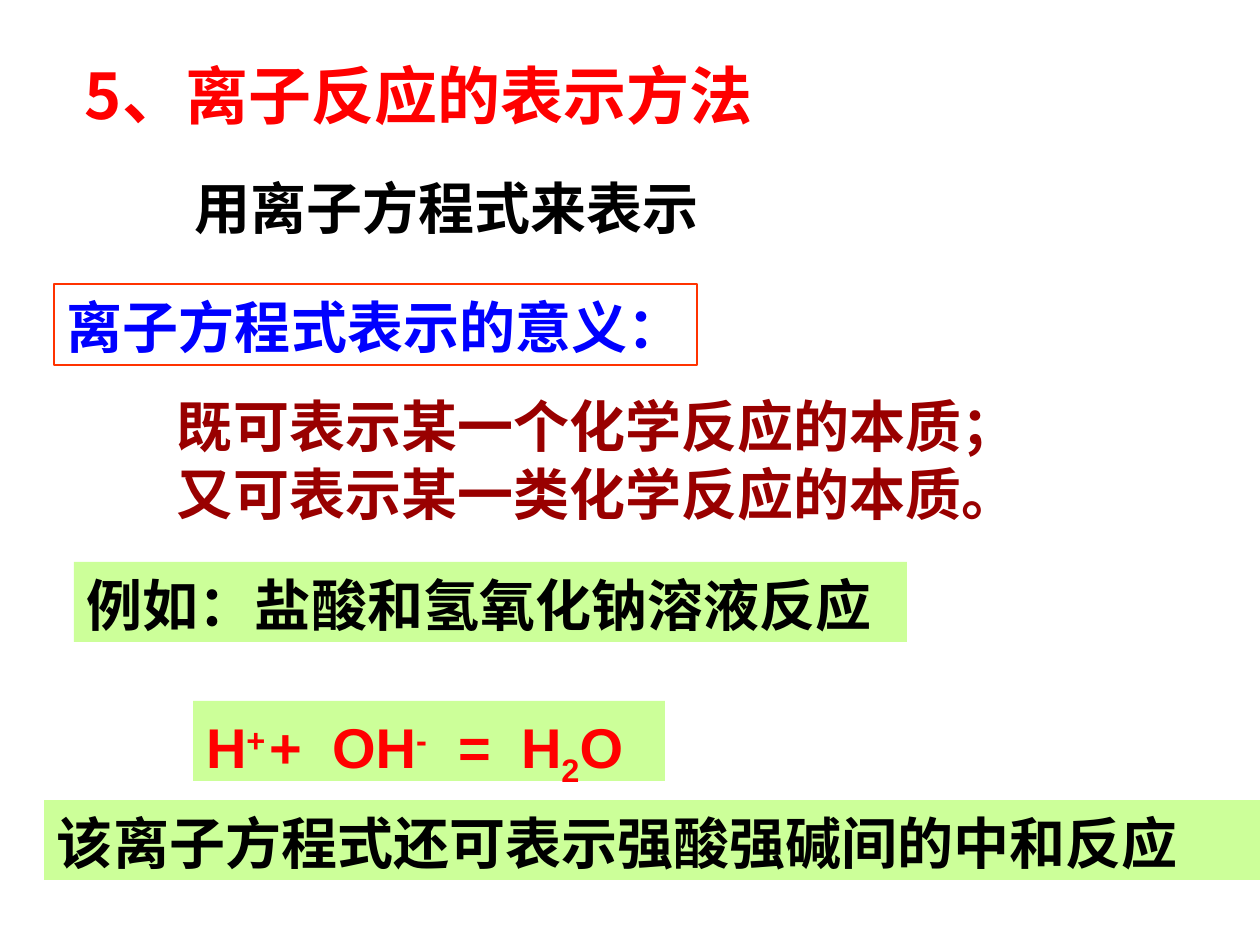
from dataclasses import dataclass

import pptx
import pptx.dml.color
import pptx.enum.shapes
import pptx.enum.text
import pptx.oxml
import pptx.oxml.ns
import pptx.util
from pptx.shapes.autoshape import Shape
from pptx.text.text import _Paragraph as Paragraph

PIXELS_PER_INCH = 126


@dataclass(frozen=True)
class Theme:
    title_color: str = "FF0000"
    text_color: str = "000000"
    heading_color: str = "0000FF"
    meaning_color: str = "990000"
    border_color: str = "FF3300"
    highlight: str = "CCFF99"
    title_font: str = "Noto Sans CJK SC"
    font: str = "Arial"
    title_size: int = 36
    size: int = 32
    line_ratio: float = 1.2


THEME = Theme()


@dataclass(frozen=True)
class Box:
    left: int
    top: int
    width: int
    height: int


@dataclass(frozen=True)
class Run:
    text: str
    baseline: int = 0


@dataclass(frozen=True)
class Style:
    color: str
    font: str = THEME.font
    size: int = THEME.size
    top_inset: int = 9
    fixed_lines: bool = True


@dataclass(frozen=True)
class Label:
    box: Box
    lines: list[list[Run]]
    style: Style
    fill: str | None = None
    border: str | None = None
    tab_stops: tuple[int, ...] = ()


def px(length: int) -> pptx.util.Emu:
    return pptx.util.Emu(round(length * 914400 / PIXELS_PER_INCH))


def rgb(color: str) -> pptx.dml.color.RGBColor:
    return pptx.dml.color.RGBColor.from_string(color)


def place(shape: Shape, box: Box) -> None:
    shape.left, shape.top = px(box.left), px(box.top)
    shape.width, shape.height = px(box.width), px(box.height)


def add_run(paragraph: Paragraph, part: Run, style: Style) -> None:
    run = paragraph.add_run()
    run.text = part.text
    run.font.name = style.font
    run.font.size = pptx.util.Pt(style.size)
    run.font.bold = True
    run.font.color.rgb = rgb(style.color)
    if part.baseline:
        run.font._element.set("baseline", str(part.baseline * 1000))


def format_paragraph(paragraph: Paragraph, style: Style, tab_stops: tuple[int, ...]) -> None:
    """Set left alignment and line pitch, without bullet or indent."""
    paragraph.alignment = pptx.enum.text.PP_ALIGN.LEFT
    paragraph.space_before = paragraph.space_after = pptx.util.Pt(0)
    if style.fixed_lines:
        paragraph.line_spacing = pptx.util.Pt(style.size * THEME.line_ratio)
    properties = paragraph._p.get_or_add_pPr()
    properties.set("marL", "0")
    properties.set("indent", "0")
    namespace = pptx.oxml.ns.nsdecls("a")
    properties.append(pptx.oxml.parse_xml(f"<a:buNone {namespace}/>"))
    if tab_stops:
        stops = "".join(f'<a:tab pos="{px(stop)}" algn="l"/>' for stop in tab_stops)
        properties.append(pptx.oxml.parse_xml(f"<a:tabLst {namespace}>{stops}</a:tabLst>"))


def write_label(shape: Shape, label: Label) -> None:
    place(shape, label.box)
    frame = shape.text_frame
    frame.word_wrap = True
    frame.auto_size = pptx.enum.text.MSO_AUTO_SIZE.NONE
    frame.vertical_anchor = pptx.enum.text.MSO_ANCHOR.TOP
    frame.margin_left, frame.margin_right = px(13), px(0)
    frame.margin_top, frame.margin_bottom = px(label.style.top_inset), px(0)
    for index, line in enumerate(label.lines):
        paragraph = frame.add_paragraph() if index else frame.paragraphs[0]
        format_paragraph(paragraph, label.style, label.tab_stops)
        for part in line:
            add_run(paragraph, part, label.style)


def add_label(slide: pptx.slide.Slide, label: Label) -> None:
    box = label.box
    bounds = px(box.left), px(box.top), px(box.width), px(box.height)
    if label.fill or label.border:
        shape = slide.shapes.add_shape(pptx.enum.shapes.MSO_SHAPE.RECTANGLE, *bounds)
        shape.shadow.inherit = False
        if label.fill:
            shape.fill.solid()
            shape.fill.fore_color.rgb = rgb(label.fill)
        else:
            shape.fill.background()
        if label.border:
            shape.line.color.rgb = rgb(label.border)
            shape.line.width = pptx.util.Pt(0.75)
        else:
            shape.line.fill.background()
    else:
        shape = slide.shapes.add_textbox(*bounds)
    write_label(shape, label)


TITLE = Label(
    Box(72, 45, 736, 88),
    [[Run("5、离子反应的表示方法")]],
    Style(THEME.title_color, THEME.title_font, THEME.title_size, top_inset=11),
)
MEANINGS = Label(
    Box(164, 383, 903, 147),
    [[Run("既可表示某一个化学反应的本质；")], [Run("又可表示某一类化学反应的本质。")]],
    Style(THEME.meaning_color),
)
EQUATION = [
    Run("H"), Run("+", 30), Run("\t+\tOH"), Run("-", 30),
    Run("\t=\tH"), Run("2", -25), Run("O"),
]
LABELS = [
    Label(Box(181, 165, 597, 80), [[Run("用离子方程式来表示")]], Style(THEME.text_color)),
    Label(Box(54, 284, 643, 81), [[Run("离子方程式表示的意义：")]],
          Style(THEME.heading_color), border=THEME.border_color),
    Label(Box(74, 562, 833, 80), [[Run("例如：盐酸和氢氧化钠溶液反应")]],
          Style(THEME.text_color), fill=THEME.highlight),
    Label(Box(193, 701, 472, 80), [EQUATION],
          Style(THEME.title_color, top_inset=12, fixed_lines=False),
          fill=THEME.highlight, tab_stops=(76, 138, 251, 330)),
    Label(Box(44, 800, 1216, 80), [[Run("该离子方程式还可表示强酸强碱间的中和反应")]],
          Style(THEME.text_color), fill=THEME.highlight),
]


def main() -> None:
    presentation = pptx.Presentation()
    presentation.slide_width, presentation.slide_height = px(1260), px(945)
    slide = presentation.slides.add_slide(presentation.slide_layouts[1])
    write_label(slide.shapes.title, TITLE)
    write_label(slide.placeholders[1], MEANINGS)
    for label in LABELS:
        add_label(slide, label)
    presentation.save("out.pptx")


if __name__ == "__main__":
    main()
